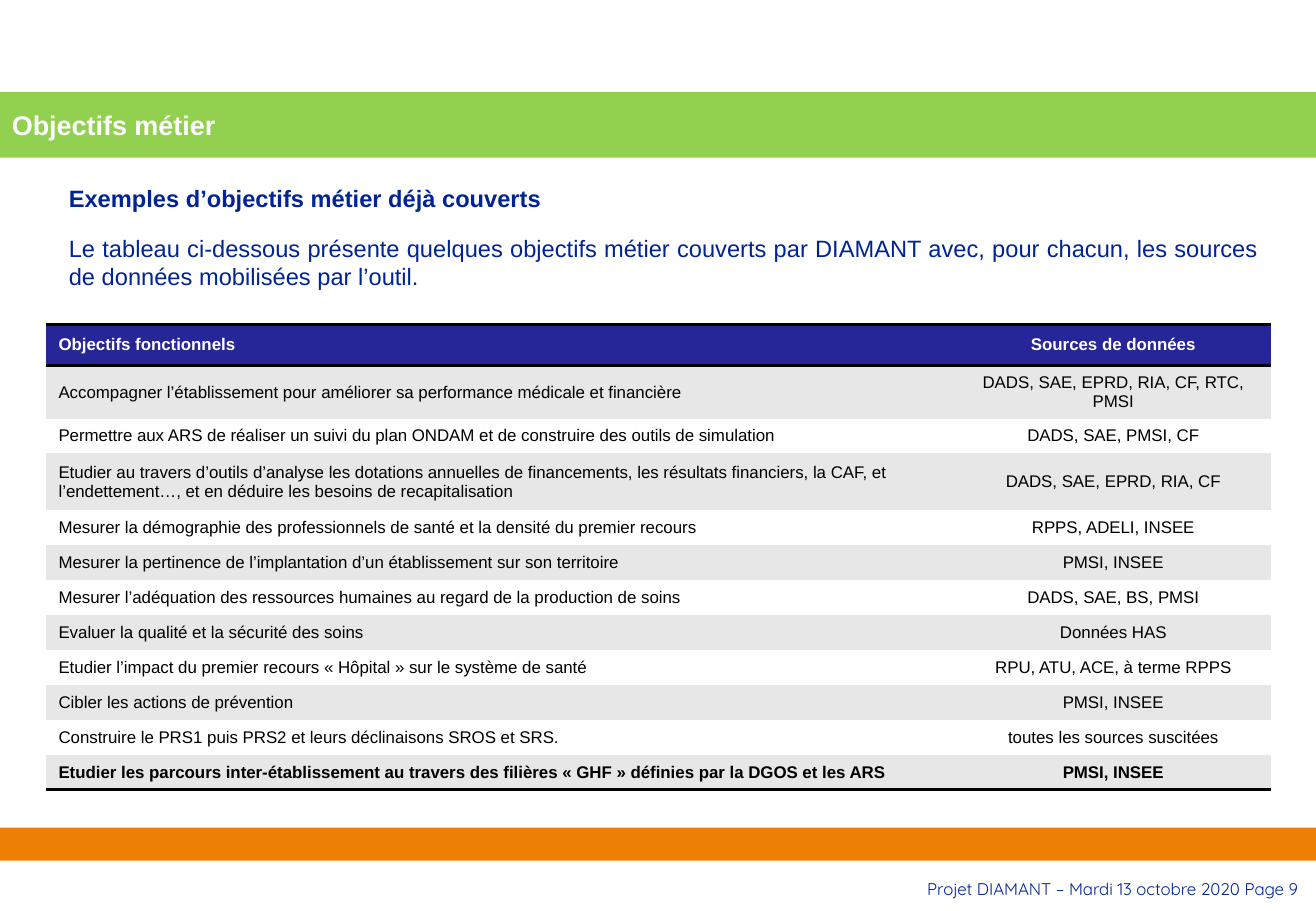
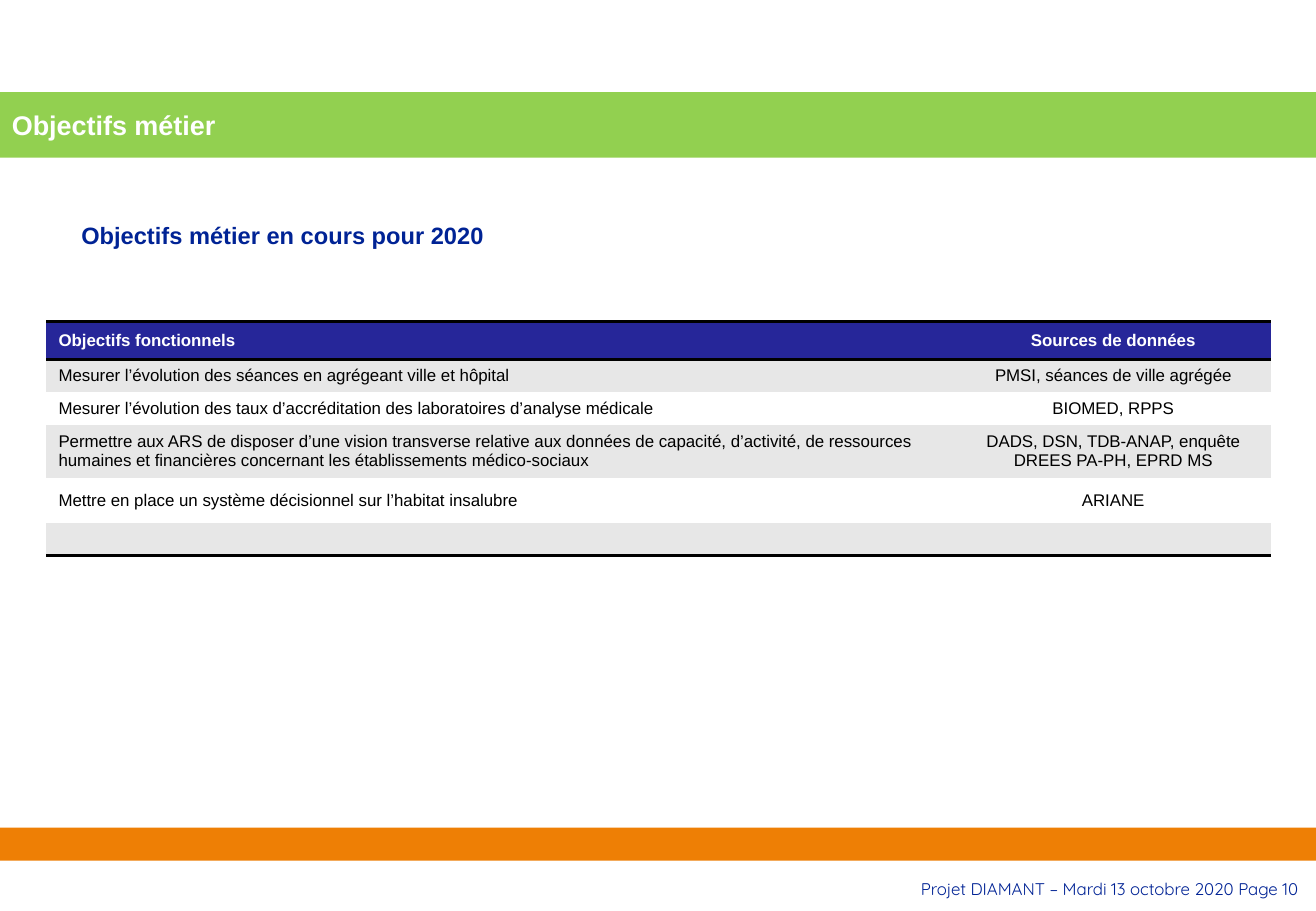
from lxml.etree import SubElement
from pptx import Presentation
from pptx.dml.color import RGBColor
from pptx.enum.shapes import MSO_SHAPE
from pptx.enum.text import MSO_ANCHOR, PP_ALIGN
from pptx.oxml import parse_xml
from pptx.oxml.ns import nsdecls, qn
from pptx.util import Cm, Pt

HUES = {
    "blue": "002395", "navy": "262699", "green": "92D050", "orange": "EE7F05",
    "grey": "E7E7E7", "white": "FFFFFF", "black": "000000",
}
WIDE, HIGH = 27.51, 19.05
LEFT, RIGHT = 0.97, 26.57
COLS = [19, 6.6]
PLAIN = "{2D5ABB26-0587-4C30-8999-92F81FD0307C}"
HEAD = ("Objectifs fonctionnels", "Sources de données")

PAGES = [
    {
        "page": 9, "left": 1.19, "top": 3.73,
        "intro": [
            "Exemples d’objectifs métier déjà couverts",
            "Le tableau ci-dessous présente quelques objectifs métier couverts par DIAMANT "
            "avec, pour chacun, les sources de données mobilisées par l’outil.",
        ],
        "table": 6.78, "strong": 11,
        "heights": [0.87, 1.09, 0.73, 1.19] + [0.73] * 8,
        "rows": [
            ("Accompagner l’établissement pour améliorer sa performance médicale et financière",
             "DADS, SAE, EPRD, RIA, CF, RTC, PMSI"),
            ("Permettre aux ARS de réaliser un suivi du plan ONDAM et de construire des outils "
             "de simulation", "DADS, SAE, PMSI, CF"),
            ("Etudier au travers d’outils d’analyse les dotations annuelles de financements, les "
             "résultats financiers, la CAF, et l’endettement…, et en déduire les besoins de "
             "recapitalisation", "DADS, SAE, EPRD, RIA, CF"),
            ("Mesurer la démographie des professionnels de santé et la densité du premier recours",
             "RPPS, ADELI, INSEE"),
            ("Mesurer la pertinence de l’implantation d’un établissement sur son territoire",
             "PMSI, INSEE"),
            ("Mesurer l’adéquation des ressources humaines au regard de la production de soins",
             "DADS, SAE, BS, PMSI"),
            ("Evaluer la qualité et la sécurité des soins", "Données HAS"),
            ("Etudier l’impact du premier recours « Hôpital » sur le système de santé",
             "RPU, ATU, ACE, à terme RPPS"),
            ("Cibler les actions de prévention", "PMSI, INSEE"),
            ("Construire le PRS1 puis PRS2 et leurs déclinaisons SROS et SRS.",
             "toutes les sources suscitées"),
            ("Etudier les parcours inter-établissement au travers des filières « GHF » définies "
             "par la DGOS et les ARS", "PMSI, INSEE"),
        ],
    },
    {
        "page": 10, "left": 1.45, "top": 4.5,
        "intro": ["Objectifs métier en cours pour 2020"],
        "table": 6.73, "strong": None,
        "heights": [0.79, 0.67, 0.69, 1.09, 0.94, 0.67],
        "rows": [
            ("Mesurer l’évolution des séances en agrégeant ville et hôpital",
             "PMSI, séances de ville agrégée"),
            ("Mesurer l’évolution des taux d’accréditation des laboratoires d’analyse médicale",
             "BIOMED, RPPS"),
            ("Permettre aux ARS de disposer d’une vision transverse relative aux données de "
             "capacité, d’activité, de ressources humaines et financières concernant les "
             "établissements médico-sociaux",
             "DADS, DSN, TDB-ANAP, enquête DREES PA-PH, EPRD MS"),
            ("Mettre en place un système décisionnel sur l’habitat insalubre", "ARIANE"),
            ("", ""),
        ],
    },
]


def style(par, size, hue, bold=False, align=PP_ALIGN.LEFT, face="Arial"):
    par.alignment = align
    font = par.font
    font.name, font.size, font.bold = face, Pt(size), bold
    font.color.rgb = RGBColor.from_string(HUES[hue])


def band(slide, top, height, hue):
    """Add a full-width bar without outline or shadow."""
    bar = slide.shapes.add_shape(MSO_SHAPE.RECTANGLE, 0, Cm(top), Cm(WIDE), Cm(height))
    bar.shadow.inherit = False
    bar.fill.solid()
    bar.fill.fore_color.rgb = RGBColor.from_string(HUES[hue])
    bar.line.fill.background()
    return bar


deck = Presentation()
deck.slide_width, deck.slide_height = Cm(WIDE), Cm(HIGH)

for data in PAGES:
    slide = deck.slides.add_slide(deck.slide_layouts[6])

    # Bands and footer
    band(slide, 17.31, 0.69, "orange")
    title = band(slide, 1.93, 1.37, "green").text_frame
    title.vertical_anchor = MSO_ANCHOR.MIDDLE
    title.text = "Objectifs métier"
    style(title.paragraphs[0], 16, "white", True)

    foot = slide.shapes.add_textbox(Cm(13.97), Cm(17.81), Cm(13.41), Cm(1.55)).text_frame
    foot.word_wrap = True
    foot.vertical_anchor = MSO_ANCHOR.MIDDLE
    foot.text = f"Projet DIAMANT – Mardi 13 octobre 2020 Page {data['page']}"
    style(foot.paragraphs[0], 10, "blue", align=PP_ALIGN.RIGHT, face="Quicksand")

    # Introduction
    left = data["left"]
    intro = slide.shapes.add_textbox(
        Cm(left), Cm(data["top"]), Cm(RIGHT - left), Cm(1.2 * len(data["intro"]))).text_frame
    intro.word_wrap = True
    intro.text = "\n".join(data["intro"])
    for num, par in enumerate(intro.paragraphs):
        style(par, 14, "blue", num == 0, PP_ALIGN.JUSTIFY)
        if num:
            par.space_before = Pt(12.5)

    # Table
    rows = [HEAD] + data["rows"]
    last = len(rows) - 1
    frame = slide.shapes.add_table(
        len(rows), len(COLS), Cm(LEFT), Cm(data["table"]),
        Cm(sum(COLS)), Cm(sum(data["heights"])))
    table = frame.table
    table.horz_banding = False
    table._tbl.tblPr.find(qn("a:tableStyleId")).text = PLAIN
    for col, width in zip(table.columns, COLS):
        col.width = Cm(width)
    for num, (row, height) in enumerate(zip(rows, data["heights"])):
        table.rows[num].height = Cm(height)
        fill = "navy" if num == 0 else "grey" if num % 2 else "white"
        edges = {0: ["lnB", "lnT"], last: ["lnB"]}.get(num, [])
        for pos, text in enumerate(row):
            cell = table.cell(num, pos)
            cell.text = text
            cell.vertical_anchor = MSO_ANCHOR.MIDDLE
            cell.fill.solid()
            cell.fill.fore_color.rgb = RGBColor.from_string(HUES[fill])
            par = cell.text_frame.paragraphs[0]
            style(par, 10, "black" if num else "white", num in (0, data["strong"]),
                  PP_ALIGN.CENTER if pos else PP_ALIGN.LEFT)
            if not text:
                SubElement(par._p, qn("a:endParaRPr"), sz="1000")
            for edge in edges:
                cell._tc.get_or_add_tcPr().insert(0, parse_xml(
                    f'<a:{edge} {nsdecls("a")} w="{Pt(2)}"><a:solidFill>'
                    f'<a:srgbClr val="{HUES["black"]}"/></a:solidFill></a:{edge}>'))

deck.save("out.pptx")
